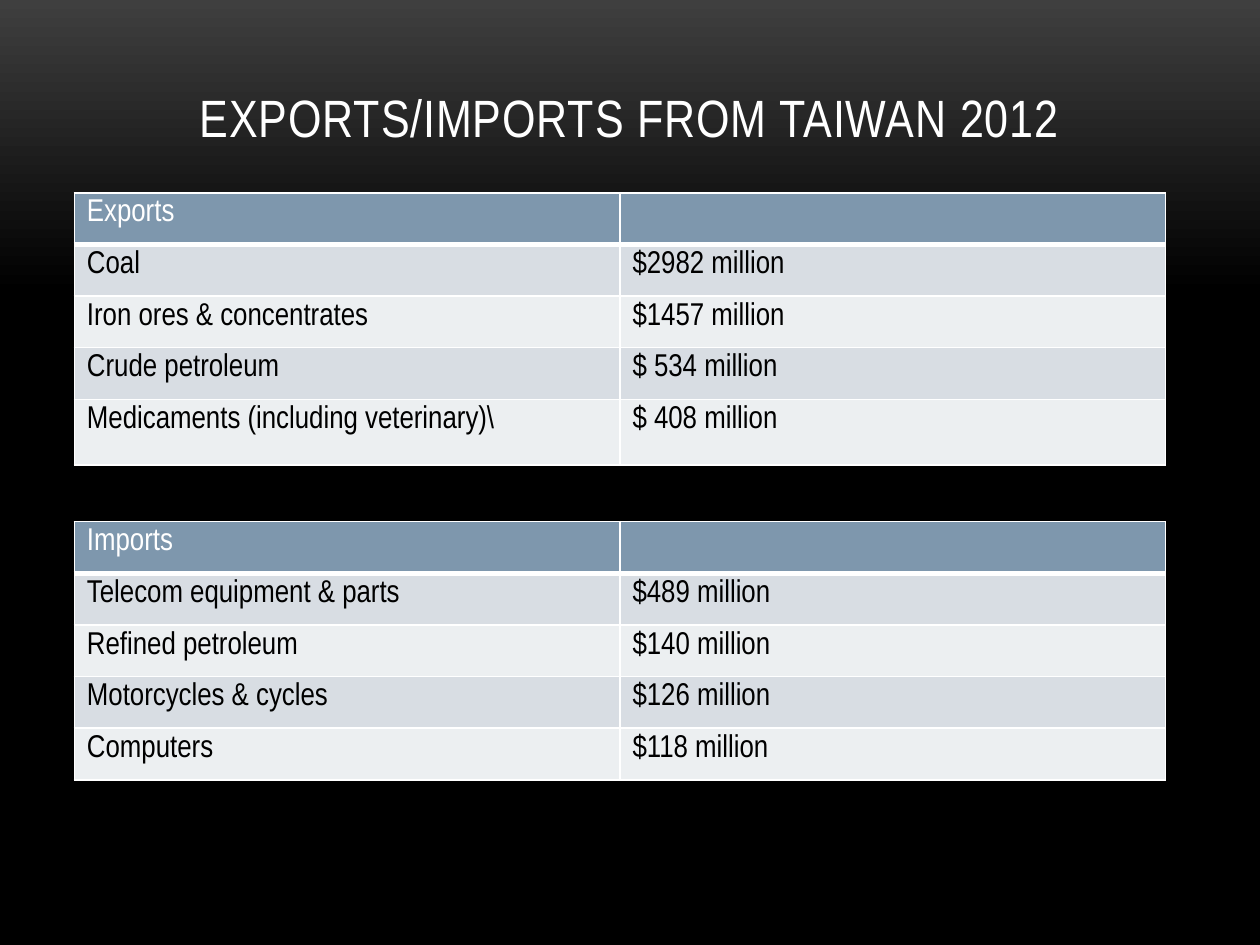
from lxml.etree import SubElement
from pptx import Presentation
from pptx.dml.color import RGBColor as RGB
from pptx.enum.text import MSO_ANCHOR as Anchor, PP_ALIGN as Align
from pptx.oxml.ns import qn
from pptx.util import Inches, Pt

COLORS = {
    "glow": "3F3F3F", "black": "000000", "white": "FFFFFF",
    "header": "7E97AD", "band_dark": "D8DDE3", "band_light": "ECEFF1",
}
FONT = "Arial Narrow"
WIDTH, HEIGHT = Inches(10), Inches(7.5)
LEFT, COL_W, ROW_H = 0.59, 4.33, 0.41

EXPORTS = [
    ("Exports", ""),
    ("Coal", "$2982 million"),
    ("Iron ores & concentrates", "$1457 million"),
    ("Crude petroleum", "$ 534 million"),
    ("Medicaments (including veterinary)\\", "$ 408 million"),
]
IMPORTS = [
    ("Imports", ""),
    ("Telecom equipment & parts", "$489 million"),
    ("Refined petroleum", "$140 million"),
    ("Motorcycles & cycles", "$126 million"),
    ("Computers", "$118 million"),
]


def rgb(name):
    return RGB.from_string(COLORS[name])


def style_font(font, color, size):
    for attr, value in {"name": FONT, "size": Pt(size), "bold": False}.items():
        setattr(font, attr, value)
    font.color.rgb = rgb(color)


def set_background(s):
    """Dark grey at the top, black from about a third of the way down."""
    fill = s.background.fill
    fill.gradient()
    fill.gradient_angle = 270
    stops = [(0, "glow"), (0.31, "black")]
    for stop, (position, color) in zip(fill.gradient_stops, stops):
        stop.position = position
        stop.color.rgb = rgb(color)


def add_title(s, text):
    margin = WIDTH // 15
    sp = s.shapes.add_textbox(margin, int(HEIGHT * 0.04),
                              WIDTH - 2 * margin, HEIGHT // 6)
    tf = sp.text_frame
    for attr, value in {"word_wrap": True,
                        "vertical_anchor": Anchor.MIDDLE}.items():
        setattr(tf, attr, value)
    p = tf.paragraphs[0]
    p.alignment = Align.CENTER
    r = p.add_run()
    r.text = text
    style_font(r.font, "white", 30)
    r.font._element.set("spc", "50")


def set_borders(cell, bottom):
    tc_pr = cell._tc.get_or_add_tcPr()
    for side, width in {"L": 1, "R": 1, "T": 1, "B": bottom}.items():
        ln = SubElement(tc_pr, qn(f"a:ln{side}"), w=str(Pt(width)))
        solid = SubElement(ln, qn("a:solidFill"))
        SubElement(solid, qn("a:srgbClr"), val=COLORS["white"])


def add_trade_table(s, rows, top, last_row=ROW_H):
    heights = [ROW_H] * (len(rows) - 1) + [last_row]
    cols = len(rows[0])
    table = s.shapes.add_table(
        len(rows), cols, Inches(LEFT), Inches(top),
        Inches(COL_W * cols), Inches(sum(heights))).table
    for col in table.columns:
        col.width = Inches(COL_W)
    for i, (values, height) in enumerate(zip(rows, heights)):
        table.rows[i].height = Inches(height)
        band = "band_dark" if i % 2 else "band_light"
        for j, text in enumerate(values):
            cell = table.cell(i, j)
            set_borders(cell, bottom=1 if i else 3)
            cell.fill.solid()
            cell.fill.fore_color.rgb = rgb(band if i else "header")
            cell.text = text
            style_font(cell.text_frame.paragraphs[0].font,
                       "black" if i else "white", 18)
            for r in cell.text_frame.paragraphs[0].runs:
                style_font(r.font, "black" if i else "white", 18)


def main():
    prs = Presentation()
    prs.slide_width, prs.slide_height = WIDTH, HEIGHT
    s = prs.slides.add_slide(prs.slide_layouts[6])
    set_background(s)
    add_title(s, "EXPORTS/IMPORTS FROM TAIWAN 2012")
    # Trade tables
    add_trade_table(s, IMPORTS, top=4.14)
    add_trade_table(s, EXPORTS, top=1.53, last_row=0.52)
    prs.save("out.pptx")


if __name__ == "__main__":
    main()
